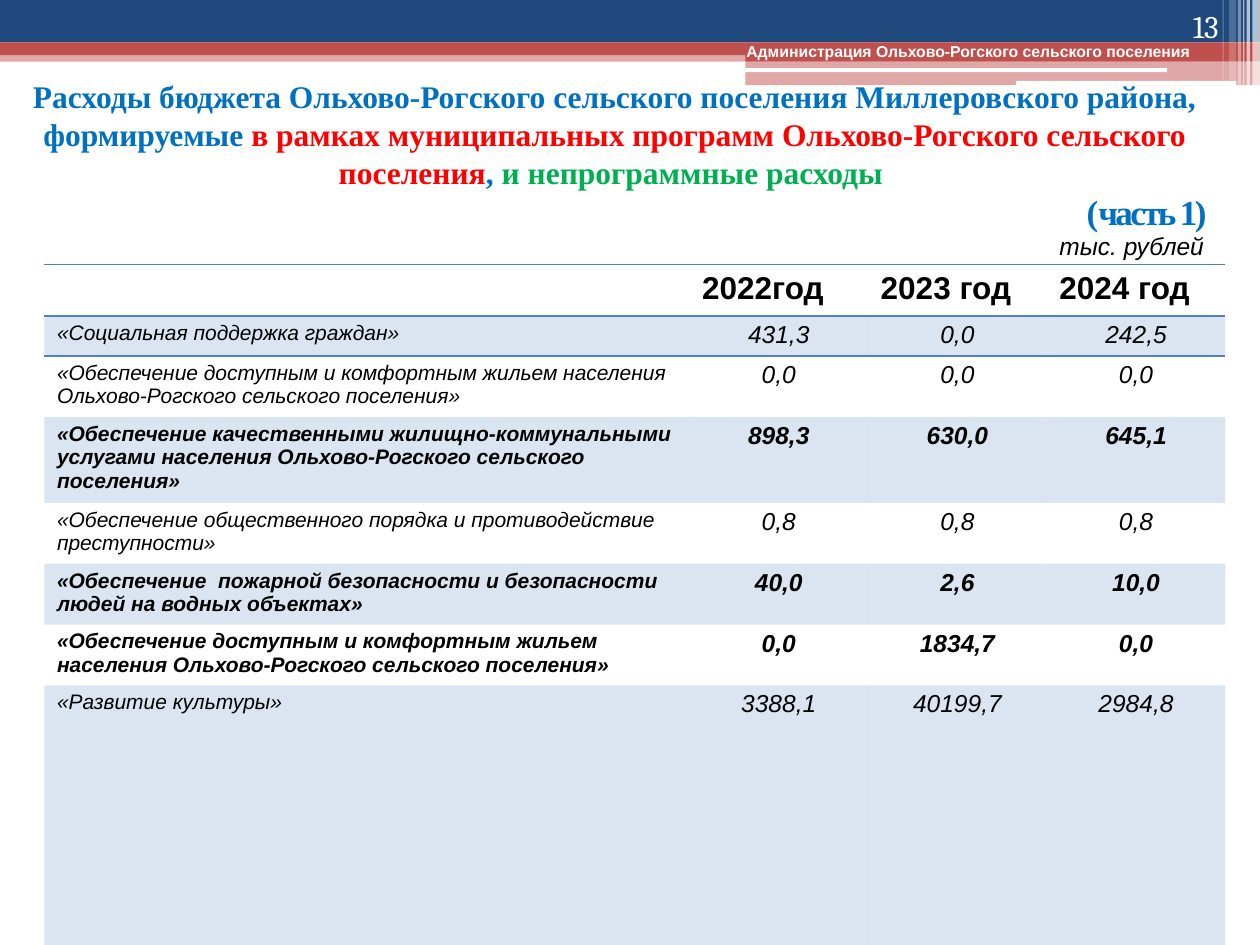
from dataclasses import dataclass

from pptx import Presentation
from pptx.dml.color import RGBColor
from pptx.enum.shapes import MSO_SHAPE as Shape
from pptx.enum.text import MSO_ANCHOR as Anchor, PP_ALIGN as Align
from pptx.oxml import parse_xml
from pptx.oxml.ns import nsdecls, qn
from pptx.util import Pt


@dataclass(frozen=True)
class Theme:
    navy: str = "1F497D"
    red: str = "C0504D"
    white: str = "FFFFFF"
    black: str = "000000"
    table_blue: str = "4F81BD"
    title_blue: str = "0070C0"
    title_red: str = "FF0000"
    title_green: str = "00B050"
    sans: str = "Arial"
    serif: str = "Times New Roman"
    number_font: str = "Cambria"
    banner_size: int = 9
    label_size: int = 12
    value_size: int = 14
    title_size: int = 18
    part_size: int = 20


theme = Theme()


def paint(fill, properties, color, opacity=100):
    fill.solid()
    fill.fore_color.rgb = RGBColor.from_string(color)
    if opacity < 100:
        color_element = properties.find(qn("a:solidFill")).find(qn("a:srgbClr"))
        color_element.append(parse_xml(f'<a:alpha {nsdecls("a")} val="{opacity * 1000}"/>'))


def add_run(paragraph, text, size, font, color, bold=False, italic=False):
    run = paragraph.add_run()
    run.text = text
    run.font.size = Pt(size)
    run.font.name = font
    run.font.color.rgb = RGBColor.from_string(color)
    run.font.bold = bold
    run.font.italic = italic
    return run


presentation = Presentation()
presentation.slide_width, presentation.slide_height = Pt(720), Pt(540)
slide = presentation.slides.add_slide(presentation.slide_layouts[6])

# Header bands and the fine stripes at the right edge
bands = [
    (Shape.RECTANGLE, 0, 28.8, 720, 6.5, theme.red, 50),
    (Shape.RECTANGLE, 0, 0, 720, 24.3, theme.navy, 100),
    (Shape.RECTANGLE, 0, 24.3, 720, 7.2, theme.red, 100),
    (Shape.RECTANGLE, 426, 28, 294, 7, theme.red, 100),
    (Shape.RECTANGLE, 426, 34.7, 294, 14, theme.red, 50),
    (Shape.ROUNDED_RECTANGLE, 425.7, 39, 241.2, 2.2, theme.white, 100),
    (Shape.ROUNDED_RECTANGLE, 580.5, 46.3, 126, 2.6, theme.white, 100),
]
stripes = [(715.6, 4.3, 49, 65), (712.3, 2, 49, 65), (710.4, 0.7, 49, 60),
           (707.3, 2, 49, 40), (702.2, 4, 46, 20), (698.6, 0.7, 46, 30)]
bands += [(Shape.RECTANGLE, left, 0, width, height, theme.white, opacity)
          for left, width, height, opacity in stripes]
for kind, left, top, width, height, color, opacity in bands:
    shape = slide.shapes.add_shape(kind, Pt(left), Pt(top), Pt(width), Pt(height))
    shape.shadow.inherit = False
    paint(shape.fill, shape.element.spPr, color, opacity)
    shape.line.fill.background()

# Text boxes: banner, title, page number, unit
boxes = {}
for name, left, top, width, height, anchor, align in [
    ("banner", 416.9, 20.5, 272.2, 18, Anchor.TOP, Align.LEFT),
    ("title", 0, 43.2, 702.7, 90.7, Anchor.MIDDLE, Align.CENTER),
    ("number", 643.7, 0.4, 59.8, 28.8, Anchor.BOTTOM, Align.RIGHT),
    ("unit", 598.3, 128.2, 102.2, 24.5, Anchor.TOP, Align.LEFT),
]:
    box = slide.shapes.add_textbox(Pt(left), Pt(top), Pt(width), Pt(height))
    box.text_frame.word_wrap = True
    box.text_frame.vertical_anchor = anchor
    boxes[name] = box.text_frame.paragraphs[0]
    boxes[name].alignment = align

add_run(boxes["banner"], " Администрация Ольхово-Рогского сельского поселения",
        theme.banner_size, theme.sans, theme.white, bold=True)
add_run(boxes["number"], "13", theme.title_size, theme.number_font, theme.white)
add_run(boxes["unit"], "тыс. рублей", theme.value_size, theme.sans, theme.black, italic=True)

# Title: three coloured lines, then the part number at a tab stop
title = boxes["title"]
for text, color in [
    ("Расходы бюджета Ольхово-Рогского сельского поселения Миллеровского района, формируемые ",
     theme.title_blue),
    ("в рамках муниципальных программ Ольхово-Рогского сельского поселения", theme.title_red),
    (", ", theme.title_blue),
    ("и непрограммные расходы ", theme.title_green),
]:
    add_run(title, text, theme.title_size, theme.serif, color, bold=True)
title.add_line_break()
add_run(title, "\t(", theme.part_size, theme.serif, theme.title_blue, bold=True)
part = add_run(title, "часть 1)", theme.part_size, theme.serif, theme.title_blue, bold=True)
part.font._element.set("spc", "-150")
title._p.get_or_add_pPr().append(parse_xml(
    f'<a:tabLst {nsdecls("a")}><a:tab pos="{Pt(607.7)}" algn="l"/></a:tabLst>'))

# Table: label, values, bold row, row height
years = ["", "2022год", "2023 год", "2024 год"]
programmes = [
    ("«Социальная поддержка граждан»", "431,3 0,0 242,5", False, 22.7),
    ("«Обеспечение доступным и комфортным жильем населения Ольхово-Рогского сельского поселения»",
     "0,0 0,0 0,0", False, 34.2),
    ("«Обеспечение качественными жилищно-коммунальными услугами населения "
     "Ольхово-Рогского сельского поселения»", "898,3 630,0 645,1", True, 47.6),
    ("«Обеспечение общественного порядка и противодействие преступности»",
     "0,8 0,8 0,8", False, 34.2),
    ("«Обеспечение  пожарной безопасности и безопасности людей на водных объектах»",
     "40,0 2,6 10,0", True, 34.2),
    ("«Обеспечение доступным и комфортным жильем населения Ольхово-Рогского сельского поселения»",
     "0,0 1834,7 0,0", True, 34.2),
    ("«Развитие культуры»", "3388,1 40199,7 2984,8", False, 151),
]
rows = [(years, True, 29.6)] + [([label, *values.split()], bold, height)
                                for label, values, bold, height in programmes]
column_widths = [368.6] + [102.1] * 3
frame = slide.shapes.add_table(len(rows), len(years), Pt(25.4), Pt(151),
                               Pt(sum(column_widths)), Pt(sum(row[2] for row in rows)))
table = frame.table
table.horz_banding = False
table.first_row = False
plain_style = "{2D5ABB26-0587-4C30-8999-92F81FD0307C}"
next(frame.element.iter(qn("a:tableStyleId"))).text = plain_style
for column, width in zip(table.columns, column_widths):
    column.width = Pt(width)

row_edges = {0: ("lnB", "lnT"), 1: ("lnT",), len(rows) - 1: ("lnB",)}
for row_index, (texts, bold, height) in enumerate(rows):
    is_header = row_index == 0
    table.rows[row_index].height = Pt(height)
    for column_index, text in enumerate(texts):
        cell = table.cell(row_index, column_index)
        paragraph = cell.text_frame.paragraphs[0]
        is_value = column_index > 0 and not is_header
        if not is_header:
            cell.margin_top = cell.margin_bottom = Pt(3)
        if is_value:
            paragraph.alignment = Align.CENTER
        size = (theme.title_size if is_header
                else theme.value_size if is_value else theme.label_size)
        if text:
            add_run(paragraph, text, size, theme.sans, theme.black, bold, not is_header)
        properties = cell._tc.get_or_add_tcPr()
        if row_index % 2:
            paint(cell.fill, properties, theme.table_blue, 20)
        else:
            cell.fill.background()
        for edge in row_edges.get(row_index, ()):
            properties.insert(0, parse_xml(
                f'<a:{edge} {nsdecls("a")} w="{Pt(1)}"><a:solidFill>'
                f'<a:srgbClr val="{theme.table_blue}"/></a:solidFill></a:{edge}>'))

presentation.save("out.pptx")
